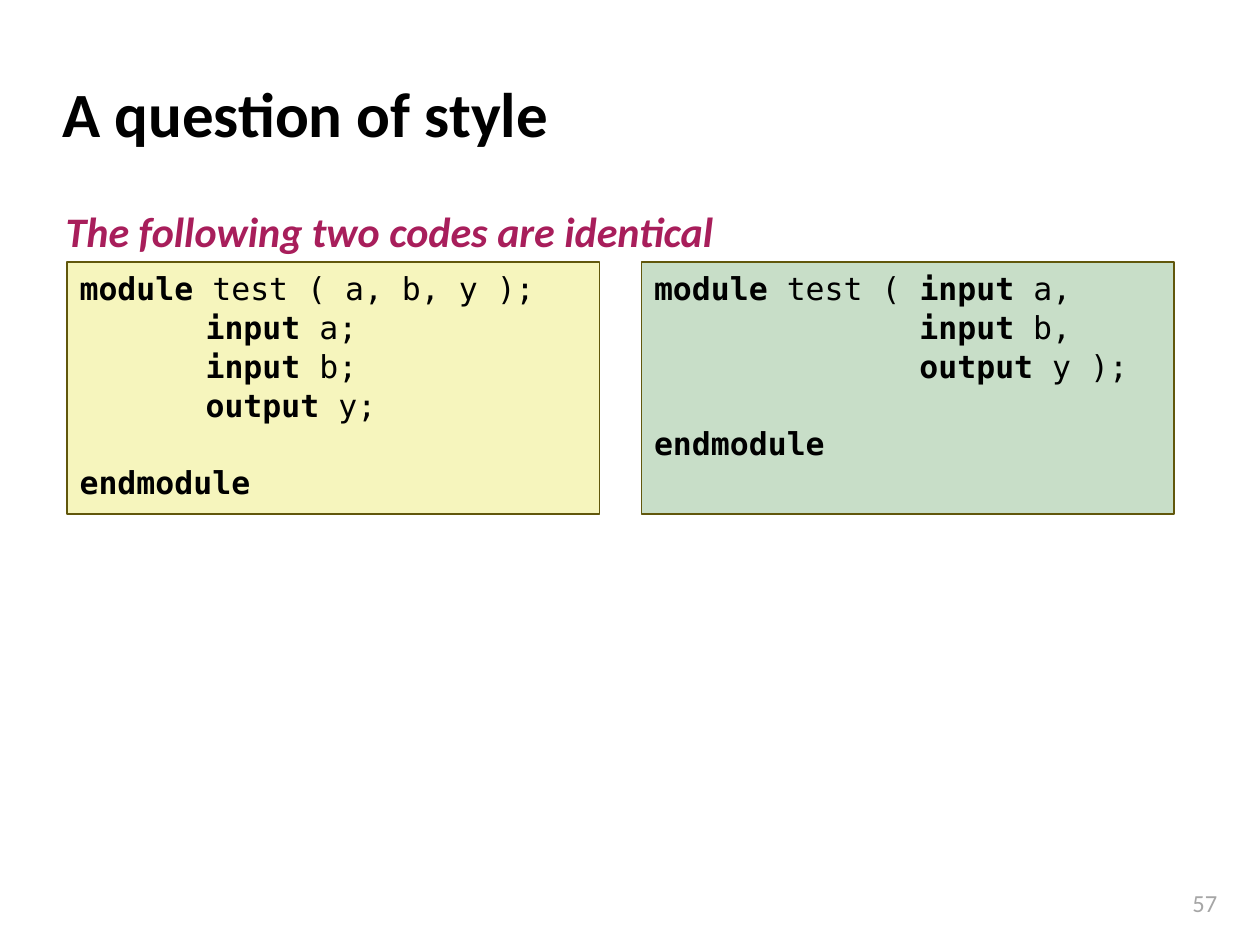
from pptx import Presentation
from pptx.dml.color import RGBColor
from pptx.enum import text as t
from pptx.oxml import parse_xml
from pptx.oxml.ns import nsdecls
from pptx.util import Cm, Pt

COLORS = {"ink": "000000", "berry": "A81E5B", "gray": "A6A6A6",
          "yellow": "F6F5BD", "green": "C8DEC8", "edge": "61570C"}
SANS, MONO = "Calibri", "DejaVu Sans Mono"
KEYS = {"module", "input", "output", "endmodule"}
LINE = Pt(21.6)


def rgb(name):
    return RGBColor.from_string(COLORS[name])


def style(run, face, size, color, bold=False, slant=False):
    font = run.font
    font.name, font.size = face, Pt(size)
    font.bold, font.italic = bold, slant
    font.color.rgb = rgb(color)


def place(shape, left, top, width, height, anchor=t.MSO_ANCHOR.TOP):
    shape.left, shape.top = Cm(left), Cm(top)
    shape.width, shape.height = Cm(width), Cm(height)
    frame = shape.text_frame
    frame.word_wrap = True
    frame.auto_size = t.MSO_AUTO_SIZE.NONE
    frame.vertical_anchor = anchor
    return frame


def label(frame, words, size, color, align=t.PP_ALIGN.LEFT, **looks):
    frame.text = words
    para = frame.paragraphs[0]
    para.alignment = align
    para.space_before = Pt(0)
    style(para.runs[0], SANS, size, color, **looks)


def indent(para, depth):
    """Drop the bullet and start the line at the given depth in cm."""
    props = para._p.get_or_add_pPr()
    props.set("marL", str(Cm(depth)))
    props.set("indent", "0")
    props.append(parse_xml(f"<a:buNone {nsdecls('a')}/>"))


def code(shape, left, fill, lines):
    """Fill a code box; each line is (depth, gap before, pieces of text)."""
    frame = place(shape, left, 5.28, 10.74, 5.08)
    shape.fill.solid()
    shape.fill.fore_color.rgb = rgb(fill)
    shape.line.color.rgb = rgb("edge")
    shape.line.width = Pt(0.75)
    for row, (depth, gap, parts) in enumerate(lines):
        para = frame.add_paragraph() if row else frame.paragraphs[0]
        para.line_spacing = 1.03
        para.space_before = gap
        indent(para, depth)
        for part in parts:
            run = para.add_run()
            run.text = part
            style(run, MONO, 18, "ink", bold=part in KEYS)


def main():
    deck = Presentation()
    deck.slide_width, deck.slide_height = Cm(25.4), Cm(19.05)
    slide = deck.slides.add_slide(deck.slide_layouts.get_by_name("Comparison"))
    title, head, first, spare, second = slide.placeholders
    spare.element.getparent().remove(spare.element)

    frame = place(title, 1, 1.22, 22.45, 2.1, t.MSO_ANCHOR.MIDDLE)
    label(frame, "A question of style", 36, "ink", bold=True)
    frame = place(head, 1.07, 4.01, 16.7, 1.27)
    label(frame, "The following two codes are identical", 24, "berry",
          bold=True, slant=True)

    none, tab, port = Pt(0), 2.54, 5.35
    end = (0, LINE, ["endmodule"])
    code(first, 1.35, "yellow", [
        (0, none, ["module", " test ( a, b, y );"]),
        (tab, none, ["input", " a;"]),
        (tab, none, ["input", " b;"]),
        (tab, none, ["output", " y;"]),
        end])
    code(second, 12.93, "green", [
        (0, none, ["module", " test ( ", "input", " a,"]),
        (port, none, ["input", " b,"]),
        (port, none, ["output", " y );"]),
        end])

    page = slide.shapes.add_textbox(0, 0, 0, 0)
    frame = place(page, 22.86, 17.78, 1.93, 0.86)
    label(frame, "57", 14, "gray", t.PP_ALIGN.RIGHT)
    deck.save("out.pptx")


if __name__ == "__main__":
    main()
